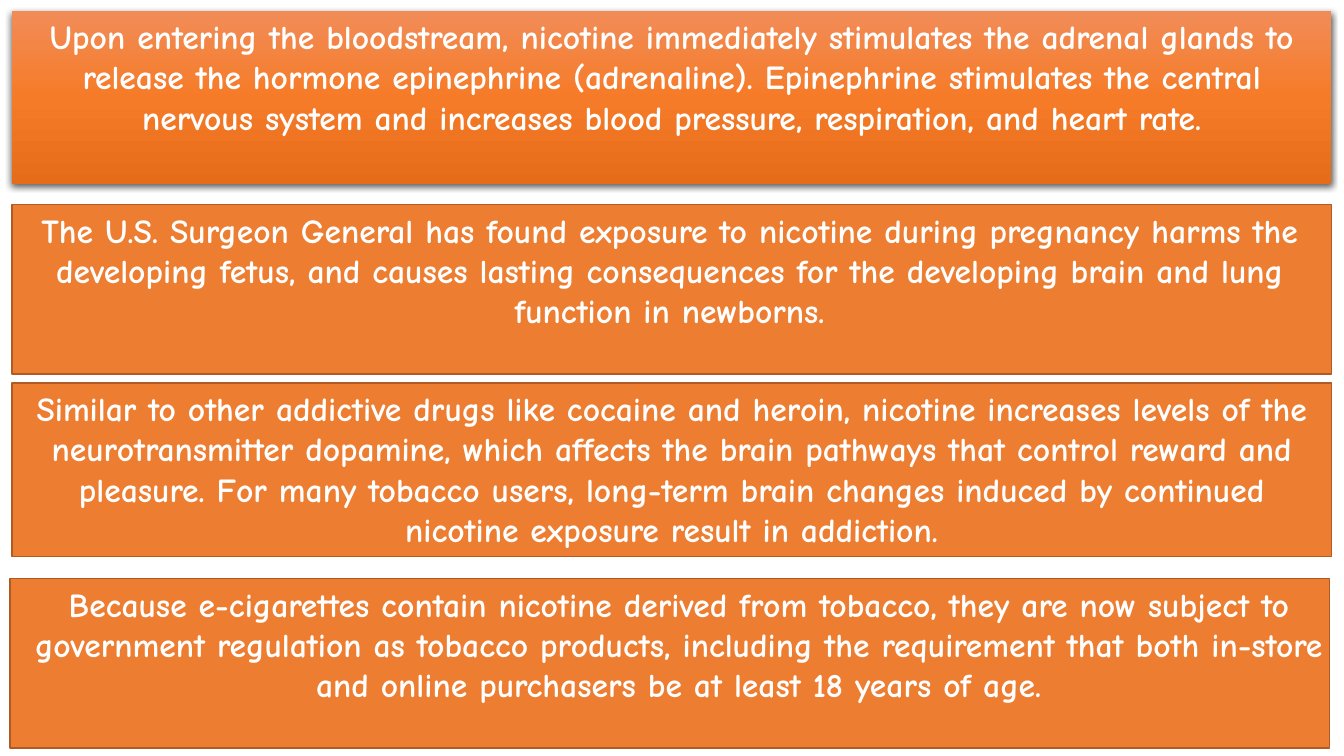
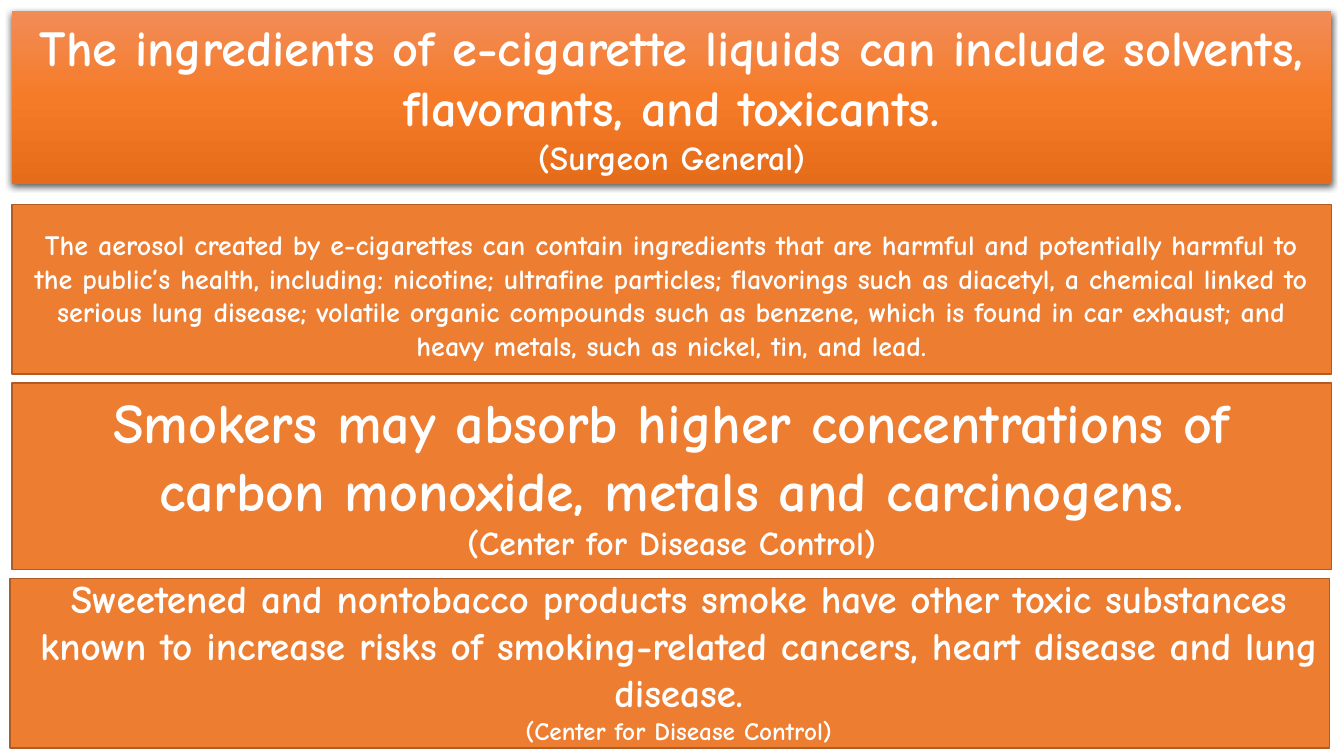
from pptx import Presentation
from pptx.dml.color import RGBColor
from pptx.enum.shapes import MSO_SHAPE as Shape
from pptx.enum.text import MSO_ANCHOR as Anchor, PP_ALIGN as Align
from pptx.oxml import parse_xml
from pptx.oxml.ns import nsdecls, qn
from pptx.util import Cm, Pt

FONT = "Comic Neue"
WHITE = RGBColor(0xFF, 0xFF, 0xFF)
ORANGE = RGBColor(0xED, 0x7D, 0x31)
BROWN = RGBColor(0xAF, 0x5C, 0x24)
SHADOW = RGBColor(0x00, 0x00, 0x00)
HEADLINE_GRADIENT = [
    (0, RGBColor(0xF1, 0x8C, 0x57)),
    (50, RGBColor(0xF6, 0x7B, 0x28)),
    (100, RGBColor(0xE5, 0x6C, 0x19)),
]

# Boxes are left, top, width, height in centimetres.
HEADLINE_BOX = (0.3, 0.28, 33.25, 4.37)
SECOND_BOX = (0.3, 5.16, 33.25, 4.27)
LAST_BOX = (0.25, 14.58, 33.25, 4.27)

# Each statement is a list of paragraphs: text and size in points.
SLIDES = [
    {
        "headline": [("Upon entering the bloodstream, nicotine immediately stimulates the "
                      "adrenal glands to release the hormone epinephrine (adrenaline). "
                      "Epinephrine stimulates the central nervous system and increases "
                      "blood pressure, respiration, and heart rate.", 24)],
        "second": [("The U.S. Surgeon General has found exposure to nicotine during "
                    "pregnancy harms the developing fetus, and causes lasting consequences "
                    "for the developing brain and lung function in newborns.", 24)],
        "second_text_box": (0.25, 5.16, 33.25, 3.33),
        "third": [("Similar to other addictive drugs like cocaine and heroin, nicotine "
                   "increases levels of the neurotransmitter dopamine, which affects the "
                   "brain pathways that control reward and pleasure. For many tobacco "
                   "users, long-term brain changes induced by continued nicotine exposure "
                   "result in addiction.", 24)],
        "third_box": (0.3, 9.65, 33.25, 4.37),
        "last": [("Because e-cigarettes contain nicotine derived from tobacco, they are now "
                  "subject to government regulation as tobacco products, including the "
                  "requirement that both in-store and online purchasers be at least "
                  "18 years of age.", 24)],
        "last_text_box": (0.53, 14.58, 33.15, 4.37),
    },
    {
        "headline": [("The ingredients of e-cigarette liquids can include solvents, "
                      "flavorants, and toxicants.", 36),
                     ("(Surgeon General)", 24)],
        "second": [("The aerosol created by e-cigarettes can contain ingredients that are "
                    "harmful and potentially harmful to the public’s health, including: "
                    "nicotine; ultrafine particles; flavorings such as diacetyl, a chemical "
                    "linked to serious lung disease; volatile organic compounds such as "
                    "benzene, which is found in car exhaust; and heavy metals, such as "
                    "nickel, tin, and lead.", 20)],
        "second_text_box": (0.3, 5.61, 33.25, 3.68),
        "third": [("Smokers may absorb higher concentrations of carbon monoxide, metals "
                   "and carcinogens.", 40),
                  ("(Center for Disease Control)", 24)],
        "third_box": (0.3, 9.65, 33.25, 4.7),
        "last": [("Sweetened and nontobacco products smoke have other toxic substances "
                  "known to increase risks of smoking-related cancers, heart disease and "
                  "lung disease.", 28),
                 ("(Center for Disease Control)", 18)],
        "last_text_box": (0.53, 14.35, 33.15, 4.62),
    },
]


def write(frame, statement, font=FONT, color=WHITE, bold=True, align=Align.CENTER):
    frame.word_wrap = True
    frame.vertical_anchor = Anchor.TOP
    for i, (text, size) in enumerate(statement):
        paragraph = frame.paragraphs[0] if i == 0 else frame.add_paragraph()
        paragraph.alignment = align
        run = paragraph.add_run()
        run.text = text
        run.font.name = font
        run.font.size = Pt(size)
        run.font.bold = bold
        run.font.color.rgb = color


def add_band(slide, box):
    band = slide.shapes.add_shape(Shape.RECTANGLE, *map(Cm, box))
    band.shadow.inherit = False
    band.fill.solid()
    band.fill.fore_color.rgb = ORANGE
    band.line.color.rgb = BROWN
    band.line.width = Pt(1)
    return band


def add_headline_band(slide):
    """Add the raised top band: three-stop gradient, no outline, soft shadow."""
    band = add_band(slide, HEADLINE_BOX)
    band.line.fill.background()
    band.fill.gradient()
    band.fill.gradient_angle = 270
    properties = band.element.spPr
    stops = properties.find(".//" + qn("a:gsLst"))
    for stop in list(stops):
        stops.remove(stop)
    for percent, color in HEADLINE_GRADIENT:
        stops.append(parse_xml(
            f'<a:gs {nsdecls("a")} pos="{percent * 1000}"><a:srgbClr val="{color}"/></a:gs>'))
    properties.find(qn("a:effectLst")).append(parse_xml(
        f'<a:outerShdw {nsdecls("a")} blurRad="{Pt(4.5)}" dist="{Pt(1.5)}" dir="5400000" '
        f'algn="ctr" rotWithShape="0"><a:srgbClr val="{SHADOW}">'
        f'<a:alpha val="63000"/></a:srgbClr></a:outerShdw>'))
    return band


def add_statement(slide, box, statement):
    write(slide.shapes.add_textbox(*map(Cm, box)).text_frame, statement)


def build_slide(deck, content):
    slide = deck.slides.add_slide(deck.slide_layouts[6])
    add_band(slide, SECOND_BOX)
    add_band(slide, LAST_BOX)
    write(add_headline_band(slide).text_frame, content["headline"])
    add_statement(slide, content["second_text_box"], content["second"])
    write(add_band(slide, content["third_box"]).text_frame, content["third"])
    add_statement(slide, content["last_text_box"], content["last"])


def main():
    deck = Presentation()
    deck.slide_width, deck.slide_height = Cm(33.87), Cm(19.05)
    for content in SLIDES:
        build_slide(deck, content)
    deck.save("out.pptx")


if __name__ == "__main__":
    main()
